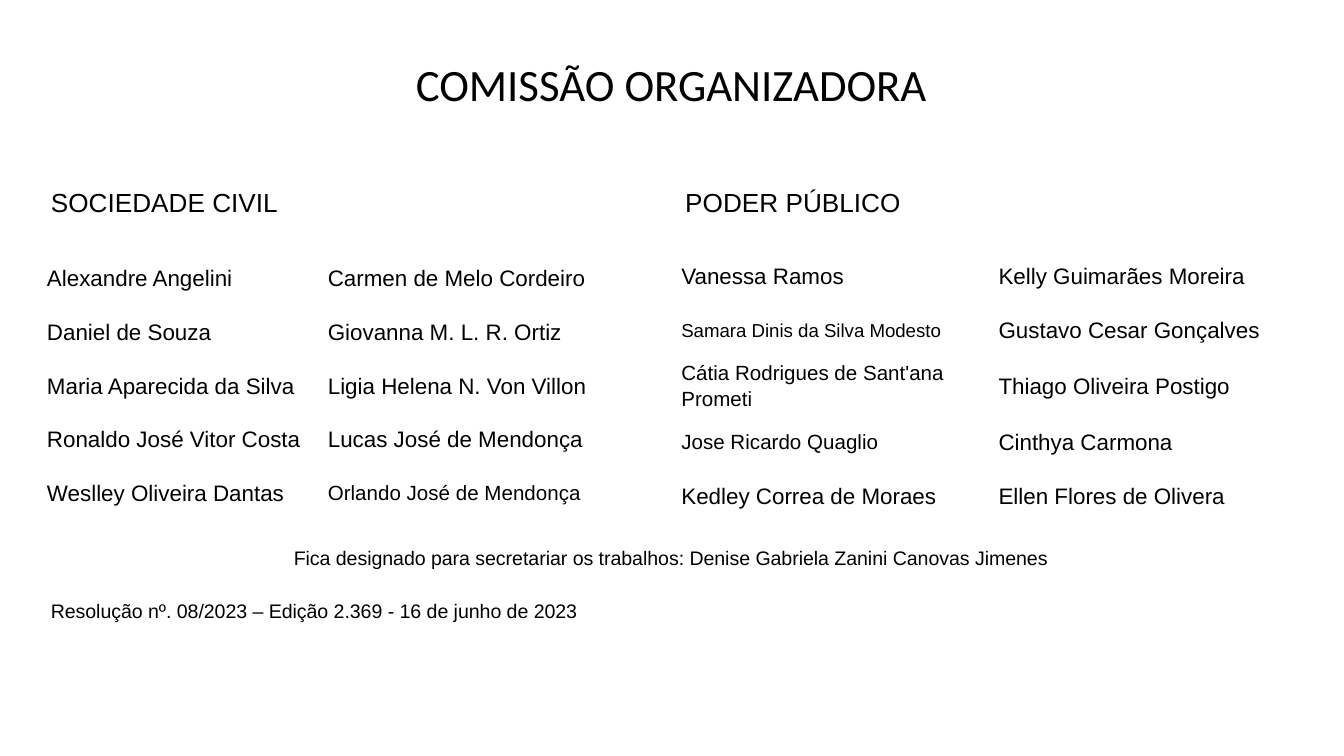
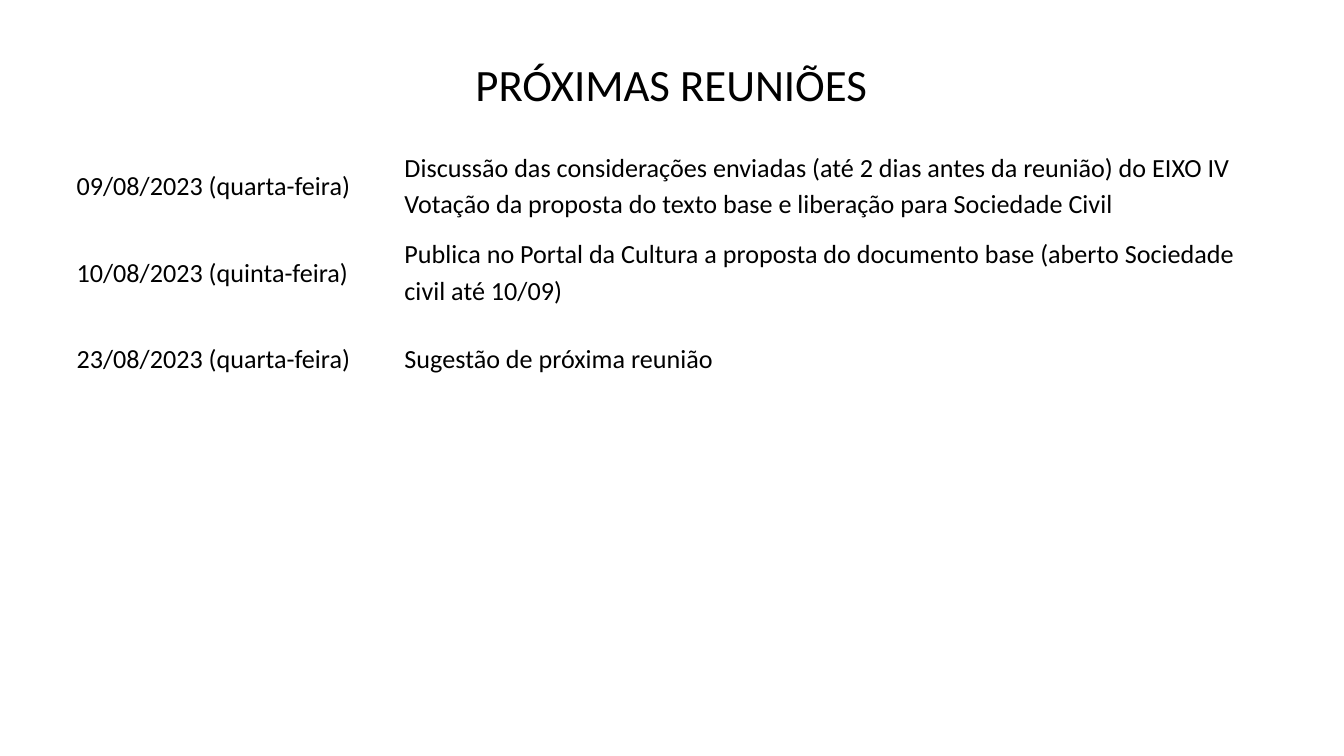
"""Builds the organising committee and upcoming meetings slides."""
from copy import deepcopy

from pptx import Presentation
from pptx.dml.color import RGBColor
from pptx.enum.text import MSO_ANCHOR, PP_ALIGN
from pptx.oxml.ns import qn
from pptx.util import Inches, Pt

COLORS = {"text": "000000", "background": "FFFFFF"}
LEFT, RIGHT_HALF, FULL_WIDTH = 0.28, 5, 9.43
JUSTIFY, CENTER, START = PP_ALIGN.JUSTIFY, PP_ALIGN.CENTER, PP_ALIGN.LEFT

COMMITTEE_TITLE = "COMISSÃO ORGANIZADORA"
CIVIL_SOCIETY = [
    ("Alexandre Angelini", "Carmen de Melo Cordeiro"),
    ("Daniel de Souza", "Giovanna M. L. R. Ortiz"),
    ("Maria Aparecida da Silva", "Ligia Helena N. Von Villon"),
    ("Ronaldo José Vitor Costa", "Lucas José de Mendonça"),
    ("Weslley Oliveira Dantas", "Orlando José de Mendonça"),
]
PUBLIC_POWER = [
    ("Vanessa Ramos", "Kelly Guimarães Moreira"),
    ("Samara Dinis da Silva Modesto", "Gustavo Cesar Gonçalves"),
    ("Cátia Rodrigues de Sant'ana Prometi", "Thiago Oliveira Postigo"),
    ("Jose Ricardo Quaglio", "Cinthya Carmona"),
    ("Kedley Correa de Moraes", "Ellen Flores de Olivera"),
]
SMALLER_NAMES = {
    "Orlando José de Mendonça": 11,
    "Samara Dinis da Silva Modesto": 10,
    "Cátia Rodrigues de Sant'ana Prometi": 11,
    "Jose Ricardo Quaglio": 11,
}
LEFT_ALIGNED_NAMES = {
    "Lucas José de Mendonça", "Orlando José de Mendonça",
    "Thiago Oliveira Postigo", "Cinthya Carmona",
}
GROUPS = [
    {"heading": "SOCIEDADE CIVIL", "rows": CIVIL_SOCIETY, "left": LEFT, "top": 1.86,
     "heading_width": 3.92, "columns": (2.09, 2.09), "height": 2,
     "aligns": (JUSTIFY, JUSTIFY)},
    {"heading": "PODER PÚBLICO", "rows": PUBLIC_POWER, "left": RIGHT_HALF, "top": 1.84,
     "heading_width": 4.71, "columns": (2.36, 2.36), "height": 2.03,
     "aligns": (START, JUSTIFY)},
]
NOTES = [
    ("Resolução nº. 08/2023 – Edição 2.369 - 16 de junho de 2023",
     (LEFT, 4.41, 5.59, 0.29), JUSTIFY),
    ("Fica designado para secretariar os trabalhos: Denise Gabriela Zanini Canovas Jimenes",
     (LEFT, 4.01, FULL_WIDTH, 0.28), CENTER),
]

MEETINGS_TITLE = "PRÓXIMAS REUNIÕES"
MEETINGS = [
    ("09/08/2023 (quarta-feira)",
     "Discussão das considerações enviadas (até 2 dias antes da reunião) do EIXO IV\v"
     "Votação da proposta do texto base e liberação para Sociedade Civil"),
    ("10/08/2023 (quinta-feira)",
     "Publica no Portal da Cultura a proposta do documento base "
     "(aberto Sociedade civil até 10/09)"),
    ("23/08/2023 (quarta-feira)", "Sugestão de próxima reunião"),
]


def write_text(frame, text, size, font_name, **paragraph_format):
    frame.text = text
    paragraph = frame.paragraphs[0]
    for name, value in paragraph_format.items():
        setattr(paragraph, name, value)
    for run in paragraph.runs:
        for name, value in {"size": Pt(size), "name": font_name, "bold": False}.items():
            setattr(run.font, name, value)
        run.font.color.rgb = RGBColor.from_string(COLORS["text"])
    for line_break in paragraph._p.findall(qn("a:br")):
        line_break.append(deepcopy(paragraph.runs[0]._r.rPr))


def add_text(slide, text, box, size, font_name, align, anchor=MSO_ANCHOR.TOP):
    frame = slide.shapes.add_textbox(*map(Inches, box)).text_frame
    frame.word_wrap = True
    frame.vertical_anchor = anchor
    write_text(frame, text, size, font_name, alignment=align)


def add_plain_table(slide, rows, left, top, columns, height, size, font_name, aligns):
    box = (left, top, sum(columns), height)
    table = slide.shapes.add_table(len(rows), len(columns), *map(Inches, box)).table
    table.first_row = table.horz_banding = False
    for column, width in zip(table.columns, columns):
        column.width = Inches(width)
    cell_format = {"margin_left": Inches(0.07), "margin_right": Inches(0.07),
                   "margin_top": 0, "margin_bottom": 0,
                   "vertical_anchor": MSO_ANCHOR.MIDDLE}
    for row, texts in zip(table.rows, rows):
        row.height = Inches(height / len(rows))
        for cell, text, align in zip(row.cells, texts, aligns):
            cell.fill.background()
            for name, value in cell_format.items():
                setattr(cell, name, value)
            write_text(cell.text_frame, text, SMALLER_NAMES.get(text, size), font_name,
                       alignment=START if text in LEFT_ALIGNED_NAMES else align,
                       line_spacing=1.15, space_after=Pt(10))


def add_titled_slide(presentation, title):
    slide = presentation.slides.add_slide(presentation.slide_layouts[6])
    slide.background.fill.solid()
    slide.background.fill.fore_color.rgb = RGBColor.from_string(COLORS["background"])
    add_text(slide, title, (LEFT, 0.16, FULL_WIDTH, 0.93), 24, "Calibri", CENTER,
             MSO_ANCHOR.MIDDLE)
    return slide


def build_committee(presentation):
    slide = add_titled_slide(presentation, COMMITTEE_TITLE)
    for group in GROUPS:
        add_plain_table(slide, group["rows"], group["left"], group["top"],
                        group["columns"], group["height"], 12, "Arial", group["aligns"])
    for group in GROUPS:
        add_text(slide, group["heading"], (group["left"], 1.34, group["heading_width"], 0.34),
                 14, "Arial", JUSTIFY)
    for text, box, align in NOTES:
        add_text(slide, text, box, 10.5, "Arial", align)


def build_meetings(presentation):
    slide = add_titled_slide(presentation, MEETINGS_TITLE)
    add_plain_table(slide, MEETINGS, 0.5, 1.05, (2.44, 6.48), 1.93, 14, "Calibri",
                    (JUSTIFY, START))


def main():
    presentation = Presentation()
    presentation.slide_width = Inches(10)
    presentation.slide_height = Inches(10) * 9 // 16
    build_committee(presentation)
    build_meetings(presentation)
    presentation.save("out.pptx")


if __name__ == "__main__":
    main()
